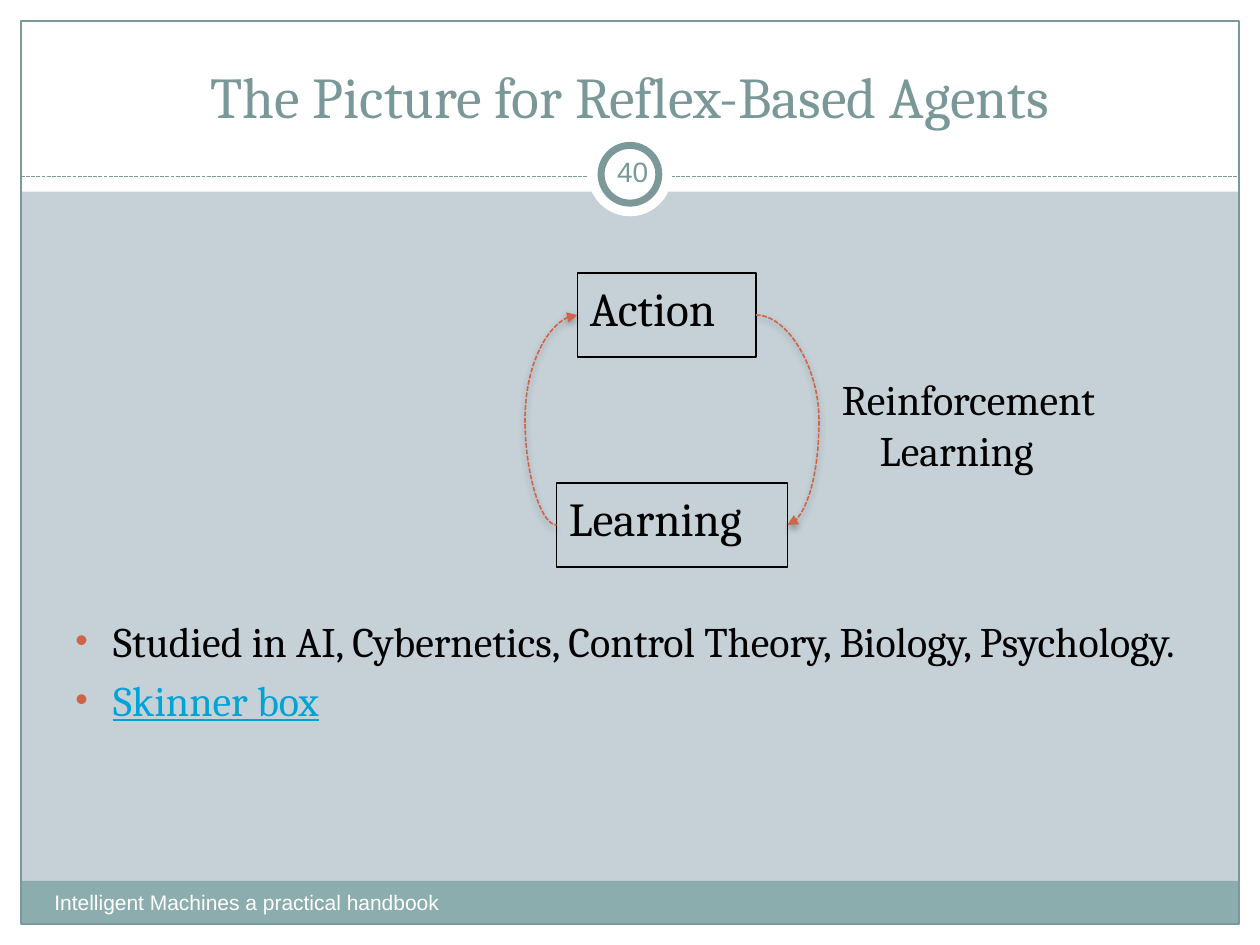
from dataclasses import dataclass
from lxml.etree import SubElement as Sub
from pptx import Presentation
from pptx.dml.color import RGBColor as RGB
from pptx.enum.dml import MSO_LINE as Dash
from pptx.enum.shapes import MSO_CONNECTOR as Conn, MSO_SHAPE as Kind
from pptx.enum.text import MSO_ANCHOR as Anchor, PP_ALIGN as Align
from pptx.oxml.ns import qn
from pptx.util import Inches, Pt


@dataclass(frozen=True)
class Theme:
    back: str = "C5D1D7"
    white: str = "FFFFFF"
    black: str = "000000"
    band: str = "8CADAE"
    rule: str = "7C999A"
    title: str = "7B9899"
    accent: str = "D16349"
    link: str = "00A3D6"
    serif: str = "Cambria"
    sans: str = "Arial"
    head: float = 33
    node: float = 27
    body: float = 24
    page: float = 16
    foot: float = 12
    thin: float = 0.75
    ring: float = 4
    curve: float = 0.9


T = Theme()
COLS, ROWS = 120, 90
EDGE = 2


def grid(n):
    """Turn grid units, twelve to the inch, into a length."""
    return Inches(n / 12)


def put(obj, **vals):
    for name, val in vals.items():
        setattr(obj, name, val)


def sub(node, tag, **vals):
    return Sub(node, qn(tag), {key: str(val) for key, val in vals.items()})


def within(box, x, y, w, h):
    """Shift a local box by the corner of its region."""
    return box[0] + x, box[1] + y, w, h


def stroke(line, color, width):
    line.color.rgb = RGB.from_string(color)
    line.width = Pt(width)


def shape(slide, box, fill=None, line=None, width=T.thin, kind=Kind.RECTANGLE):
    item = slide.shapes.add_shape(kind, *map(grid, box))
    item.shadow.inherit = False
    if fill:
        item.fill.solid()
        item.fill.fore_color.rgb = RGB.from_string(fill)
    else:
        item.fill.background()
    if line:
        stroke(item.line, line, width)
    else:
        item.line.fill.background()
    return item


def write(frame, words, size, color=T.black, face=T.serif, align=Align.LEFT,
          first=True, under=None, **fmt):
    """Add one paragraph; fmt holds settings of the text frame."""
    put(frame, **{"word_wrap": True, "vertical_anchor": Anchor.TOP, **fmt})
    para = frame.paragraphs[0] if first else frame.add_paragraph()
    para.alignment = align
    run = para.add_run()
    run.text = words
    put(run.font, name=face, size=Pt(size), underline=under)
    run.font.color.rgb = RGB.from_string(color)
    return para


def label(slide, box, *args, **fmt):
    frame = slide.shapes.add_textbox(*map(grid, box)).text_frame
    return write(frame, *args, **fmt)


def hang(para, size, mark=None):
    """Indent the lines after the first, with a bullet if one is given."""
    para.space_before = Pt(size * 0.2)
    props = para._p.get_or_add_pPr()
    dent = Inches(0.3)
    props.set("marL", str(dent))
    props.set("indent", str(-dent))
    if mark:
        sub(sub(props, "a:buClr"), "a:srgbClr", val=T.accent)
        sub(props, "a:buSzPct", val=85000)
        sub(props, "a:buFont", typeface=T.sans)
        sub(props, "a:buChar", char=mark)


def margins(slide):
    for box in ((0, ROWS - EDGE, COLS, EDGE), (0, 0, EDGE, ROWS),
                (COLS - EDGE, 0, EDGE, ROWS)):
        shape(slide, box, T.white)


def header(slide, box, title, page):
    x, y, w, h = box
    shape(slide, box, T.white)
    rule = slide.shapes.add_connector(
        Conn.STRAIGHT, *map(grid, (x + EDGE, y + 16.8, x + w - EDGE, y + 16.8)))
    stroke(rule.line, T.rule, T.thin)
    rule.line.dash_style = Dash.SQUARE_DOT
    sub(rule._element.spPr, "a:effectLst")
    for size, line in ((8, None), (5.5, T.rule)):
        disc = within(box, (w - size) / 2, 16.6 - size / 2, size, size)
        shape(slide, disc, T.white, line, T.ring, Kind.OVAL)
    label(slide, within(box, 4, 3, w - 8, 10), title, T.head, T.title,
          align=Align.CENTER, vertical_anchor=Anchor.BOTTOM)
    pad = Inches(0.05)
    label(slide, within(box, 57.25, 13.4, 6, 5.8), page, T.page, T.title, T.sans,
          Align.CENTER, vertical_anchor=Anchor.MIDDLE, margin_left=pad,
          margin_right=pad, margin_top=pad, margin_bottom=pad)


def footer(slide, box, words):
    shape(slide, box, T.band)
    label(slide, within(box, 2, 0.2, 47, 4.8), words, T.foot, T.white, T.sans)


def node(slide, box, words):
    item = shape(slide, box, line=T.black)
    hang(write(item.text_frame, words, T.node), T.node)


def arc(slide, start, stop, bend, tip):
    """Curve from start to stop; bend is the bulge as a share of the width."""
    item = slide.shapes.add_connector(Conn.CURVE, *map(grid, start + stop))
    stroke(item.line, T.accent, T.curve)
    item.line.dash_style = Dash.SQUARE_DOT
    props = item._element.spPr
    sub(props.find(qn("a:ln")), tip, type="triangle")
    guides = props.find(qn("a:prstGeom")).get_or_add_avLst()
    sub(guides, "a:gd", name="adj1", fmla=f"val {int(bend * 100000)}")
    shade = sub(sub(props, "a:effectLst"), "a:outerShdw", blurRad=Pt(4),
                dist=Pt(2), dir=90 * 60000, rotWithShape=0)
    sub(sub(shade, "a:srgbClr", val=T.black), "a:alpha", val=35000)


def cycle(slide, box, upper, lower, note):
    """Two nodes joined by a loop of arrows, with a note on the right."""
    top = within(box, 5, 0, 17, 8)
    low = within(box, 3, 20, 22, 8)
    node(slide, top, upper)
    node(slide, low, lower)
    hang(label(slide, within(box, 29, 9, 34, 14), note, T.body), T.body)
    for share, bend, tip in ((0, 2.5, "a:headEnd"), (1, 2, "a:tailEnd")):
        start, stop = ((x + share * w, y + h / 2) for x, y, w, h in (top, low))
        arc(slide, start, stop, bend, tip)


def bullets(slide, box, items):
    frame = slide.shapes.add_textbox(*map(grid, box)).text_frame
    for i, (words, fmt) in enumerate(items):
        hang(write(frame, words, T.body, first=i == 0, **fmt), T.body, "•")


def main():
    deck = Presentation()
    put(deck, slide_width=grid(COLS), slide_height=grid(ROWS))
    slide = deck.slides.add_slide(deck.slide_layouts[6])
    slide.background.fill.solid()
    slide.background.fill.fore_color.rgb = RGB.from_string(T.back)
    margins(slide)
    header(slide, (0, 0, COLS, 18.25), "The Picture for Reflex-Based Agents", "40")
    footer(slide, (EDGE, 83.9, COLS - 2 * EDGE, 4.1),
           "Intelligent Machines a practical handbook")
    shape(slide, (EDGE, EDGE, COLS - 2 * EDGE, ROWS - 2 * EDGE), line=T.rule)
    cycle(slide, (50, 26, 63, 28), "Action", "Learning", "Reinforcement Learning")
    bullets(slide, (6, 58, 110, 14), (
        ("Studied in AI, Cybernetics, Control Theory, Biology, Psychology.", {}),
        ("Skinner box", {"color": T.link, "under": True}),
    ))
    deck.save("out.pptx")


if __name__ == "__main__":
    main()
